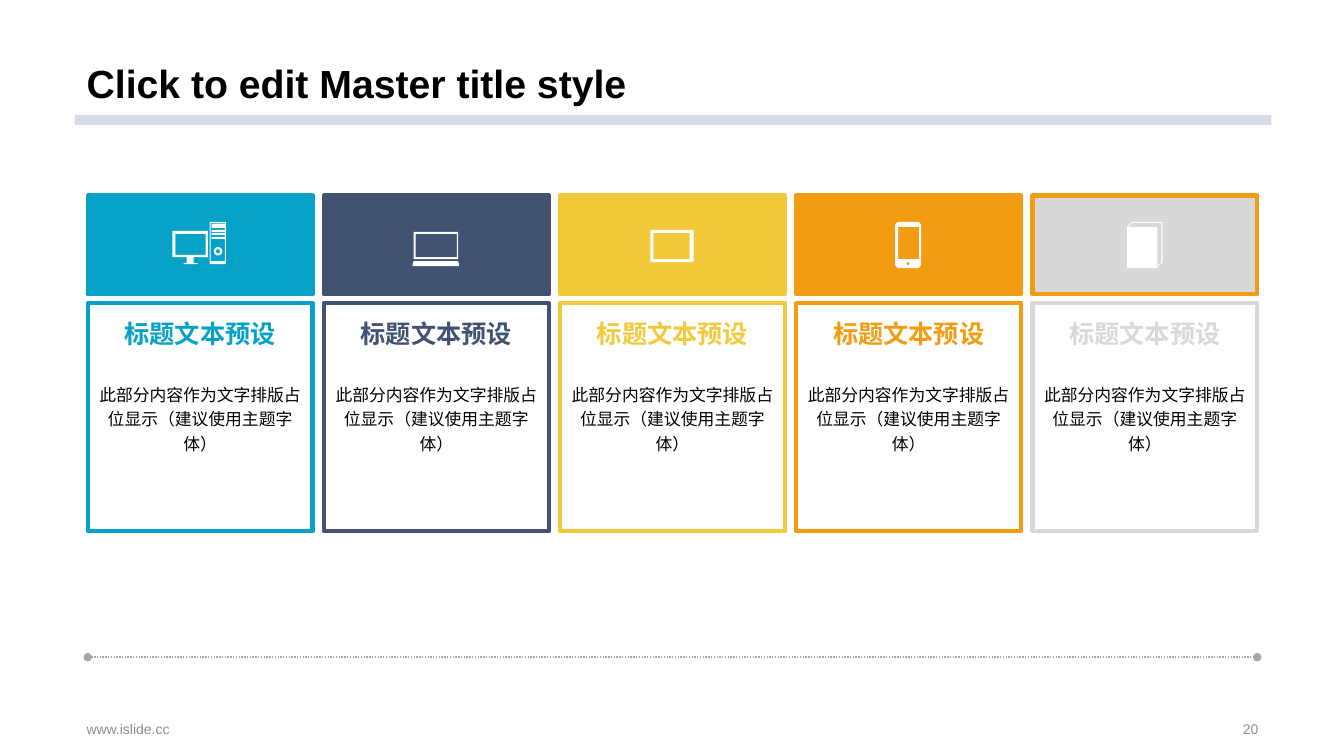
"""Build a slide of five device cards, each with an icon header and a captioned body."""
from dataclasses import dataclass
from math import cos, pi, sin
from typing import NamedTuple

from lxml.etree import SubElement
from pptx import Presentation
from pptx.dml.color import RGBColor
from pptx.enum.dml import MSO_LINE
from pptx.enum.shapes import MSO_CONNECTOR, MSO_SHAPE as Preset
from pptx.enum.text import MSO_ANCHOR as Anchor, MSO_AUTO_SIZE, PP_ALIGN as Align
from pptx.oxml.ns import qn
from pptx.shapes.autoshape import Shape
from pptx.slide import Slide
from pptx.text.text import TextFrame
from pptx.util import Inches, Pt

WIDTH, HEIGHT = Inches(13.33), Inches(7.5)
UNIT = Inches(0.01)
Contour = list[tuple[float, float]]


@dataclass(frozen=True)
class Theme:
    font: str = "Arial"
    ink: str = "000000"
    paper: str = "FFFFFF"
    band: str = "D6DCE5"
    rule: str = "A6A6A6"
    muted: str = "8C8C8C"
    teal: str = "06A1C6"
    navy: str = "425272"
    yellow: str = "F3C93C"
    orange: str = "F39C12"
    silver: str = "D8D8D8"
    title: int = 28
    heading: int = 18
    body: int = 12
    footer: int = 10
    border: int = 3


class Area(NamedTuple):
    """A rectangle in percent of the slide's width and height."""
    left: float
    top: float
    width: float
    height: float

    def emu(self) -> tuple[int, int, int, int]:
        return (round(self.left * WIDTH / 100), round(self.top * HEIGHT / 100),
                round(self.width * WIDTH / 100), round(self.height * HEIGHT / 100))


class Detail(NamedTuple):
    """A preset piece of an icon in hundredths of an inch from the header's corner."""
    preset: Preset
    left: float
    top: float
    width: float
    height: float


@dataclass(frozen=True)
class Card:
    color: str
    header_border: str
    outlines: list[list[Contour]]
    details: tuple[Detail, ...] = ()


THEME = Theme()
HEADING = "标题文本预设"
CAPTION = "此部分内容作为文字排版占位显示（建议使用主题字体）"
MARGIN, CARD_WIDTH, SPAN = 6.53, 16.73, 87.02


def box(left: float, top: float, right: float, bottom: float) -> Contour:
    """Return the corners of a rectangle."""
    return [(left, top), (right, top), (right, bottom), (left, bottom)]


def rounded(left: float, top: float, right: float, bottom: float, radius: float) -> Contour:
    """Return a rectangle whose corners are arcs of short segments."""
    centres = box(left + radius, top + radius, right - radius, bottom - radius)
    return [(x + radius * cos(angle), y + radius * sin(angle))
            for corner, (x, y) in enumerate(centres)
            for angle in (pi + (corner + step / 6) * pi / 2 for step in range(7))]


MONITOR = [[(84, 35), (119, 35), (119, 61), (105, 61), (105, 67), (109, 67), (109, 68),
            (95, 68), (95, 67), (98, 67), (98, 61), (84, 61)], box(87, 38, 117, 59)]
TOWER = [box(121, 26, 137, 68), box(122, 27, 136, 65)]
TOWER_DETAILS = (Detail(Preset.RECTANGLE, 123, 28, 13, 4),
                 *(Detail(Preset.RECTANGLE, 123, top, 13, 2) for top in (34, 37, 41)),
                 Detail(Preset.DONUT, 125, 51, 8.5, 8.5))
LAPTOP_SCREEN = [box(89, 36, 133, 63), box(91, 38, 132, 61)]
LAPTOP_BASE = [[(89, 65), (133, 65), (134, 68), (134, 70), (88, 70), (88, 68)]]
TABLET = [rounded(89.5, 34, 132.5, 66, 2), box(92.5, 37, 128.5, 63)]
PHONE = [rounded(98, 26, 124, 72, 4.5), box(101, 31, 122, 63), rounded(109.5, 66, 112.5, 69, 1.5)]
PAGES = [[(99, 26), (129, 26), (129, 67), (128, 67), (124, 71), (124, 72), (94, 72), (94, 31)],
         [(99, 27), (128, 27), (128, 67), (127, 67), (124, 70), (124, 31), (96, 31), (96, 30),
          (98, 28), (99, 28)]]

CARDS = [
    Card(THEME.teal, THEME.teal, [TOWER, MONITOR], TOWER_DETAILS),
    Card(THEME.navy, THEME.navy, [LAPTOP_SCREEN, LAPTOP_BASE]),
    Card(THEME.yellow, THEME.yellow, [TABLET]),
    Card(THEME.orange, THEME.orange, [PHONE]),
    Card(THEME.silver, THEME.orange, [PAGES]),
]


def paint(shape: Shape, fill: str, border: str | None = None) -> None:
    """Give a shape a flat fill and an optional border."""
    shape.shadow.inherit = False
    shape.fill.solid()
    shape.fill.fore_color.rgb = RGBColor.from_string(fill)
    if border:
        shape.line.color.rgb = RGBColor.from_string(border)
        shape.line.width = Pt(THEME.border)
    else:
        shape.line.fill.background()


def write(frame: TextFrame, text: str, size: int, color: str, align: Align = Align.LEFT,
          anchor: Anchor = Anchor.MIDDLE, bold: bool = False, spacing: float = 1.0) -> None:
    """Fill a frame with one formatted paragraph."""
    frame.text = text
    frame.word_wrap = True
    frame.auto_size = MSO_AUTO_SIZE.NONE
    frame.vertical_anchor = anchor
    line = frame.paragraphs[0]
    line.alignment, line.line_spacing = align, spacing
    font = line.runs[0].font
    font.name, font.size, font.bold = THEME.font, Pt(size), bold
    font.color.rgb = RGBColor.from_string(color)


def draw_outline(slide: Slide, contours: list[Contour], left: int, top: int) -> None:
    """Draw one white outline whose inner contours are holes."""
    placed = [[(round(left + x * UNIT), round(top + y * UNIT)) for x, y in contour]
              for contour in contours]
    builder = slide.shapes.build_freeform(*placed[0][0])
    for contour in placed:
        builder.move_to(*contour[0])
        builder.add_line_segments(contour[1:], close=True)
    paint(builder.convert_to_shape(), THEME.paper)


def draw_card(slide: Slide, card: Card, column: int) -> None:
    """Draw a card in its column."""
    x = MARGIN + column * (SPAN - CARD_WIDTH) / (len(CARDS) - 1)
    panel = slide.shapes.add_shape(Preset.RECTANGLE, *Area(x, 40.13, CARD_WIDTH, 30.13).emu())
    paint(panel, THEME.paper, card.color)
    write(panel.text_frame, CAPTION, THEME.body, THEME.ink, Align.CENTER, spacing=1.2)
    header = slide.shapes.add_shape(Preset.RECTANGLE, *Area(x, 25.87, CARD_WIDTH, 13.07).emu())
    paint(header, card.color, card.header_border)
    for detail in card.details:
        piece = slide.shapes.add_shape(
            detail.preset, round(header.left + detail.left * UNIT),
            round(header.top + detail.top * UNIT),
            round(detail.width * UNIT), round(detail.height * UNIT))
        paint(piece, THEME.paper)
    for outline in card.outlines:
        draw_outline(slide, outline, header.left, header.top)
    heading = slide.shapes.add_textbox(*Area(x, 41.07, CARD_WIDTH, 7.2).emu()).text_frame
    write(heading, HEADING, THEME.heading, card.color, Align.CENTER, bold=True)
    heading.word_wrap = False
    heading.margin_left = heading.margin_top = heading.margin_right = 0
    heading.margin_bottom = Inches(0.08)


def draw_rule(slide: Slide) -> None:
    """Draw the dotted rule with round ends."""
    left, y, length, _ = Area(MARGIN, 86.93, SPAN, 0).emu()
    rule = slide.shapes.add_connector(MSO_CONNECTOR.STRAIGHT, left, y, left + length, y)
    rule.line.color.rgb = RGBColor.from_string(THEME.rule)
    rule.line.width = Pt(1)
    rule.line.dash_style = MSO_LINE.ROUND_DOT
    properties = rule.element.spPr
    for end in ("a:headEnd", "a:tailEnd"):
        SubElement(properties.find(qn("a:ln")), qn(end), type="oval")
    SubElement(properties, qn("a:effectLst"))


def main() -> None:
    """Build and save the slide."""
    deck = Presentation()
    deck.slide_width, deck.slide_height = WIDTH, HEIGHT
    slide = deck.slides.add_slide(deck.slide_layouts[5])
    band = slide.shapes.add_shape(Preset.RECTANGLE, *Area(5.55, 15.2, 89.05, 1.33).emu())
    paint(band, THEME.band)
    title = slide.shapes.title
    title.left, title.top, title.width, title.height = Area(5.7, 0, 88.6, 14.8).emu()
    write(title.text_frame, "Click to edit Master title style", THEME.title, THEME.ink,
          anchor=Anchor.BOTTOM, bold=True, spacing=0.9)
    for text, area, align in (("www.islide.cc", Area(5.7, 94.93, 33.76, 3.07), Align.LEFT),
                              ("20", Area(70.67, 94.93, 23.7, 3.07), Align.RIGHT)):
        footer = slide.shapes.add_textbox(*area.emu())
        write(footer.text_frame, text, THEME.footer, THEME.muted, align)
    draw_rule(slide)
    for column, card in enumerate(CARDS):
        draw_card(slide, card, column)
    deck.save("out.pptx")


if __name__ == "__main__":
    main()
